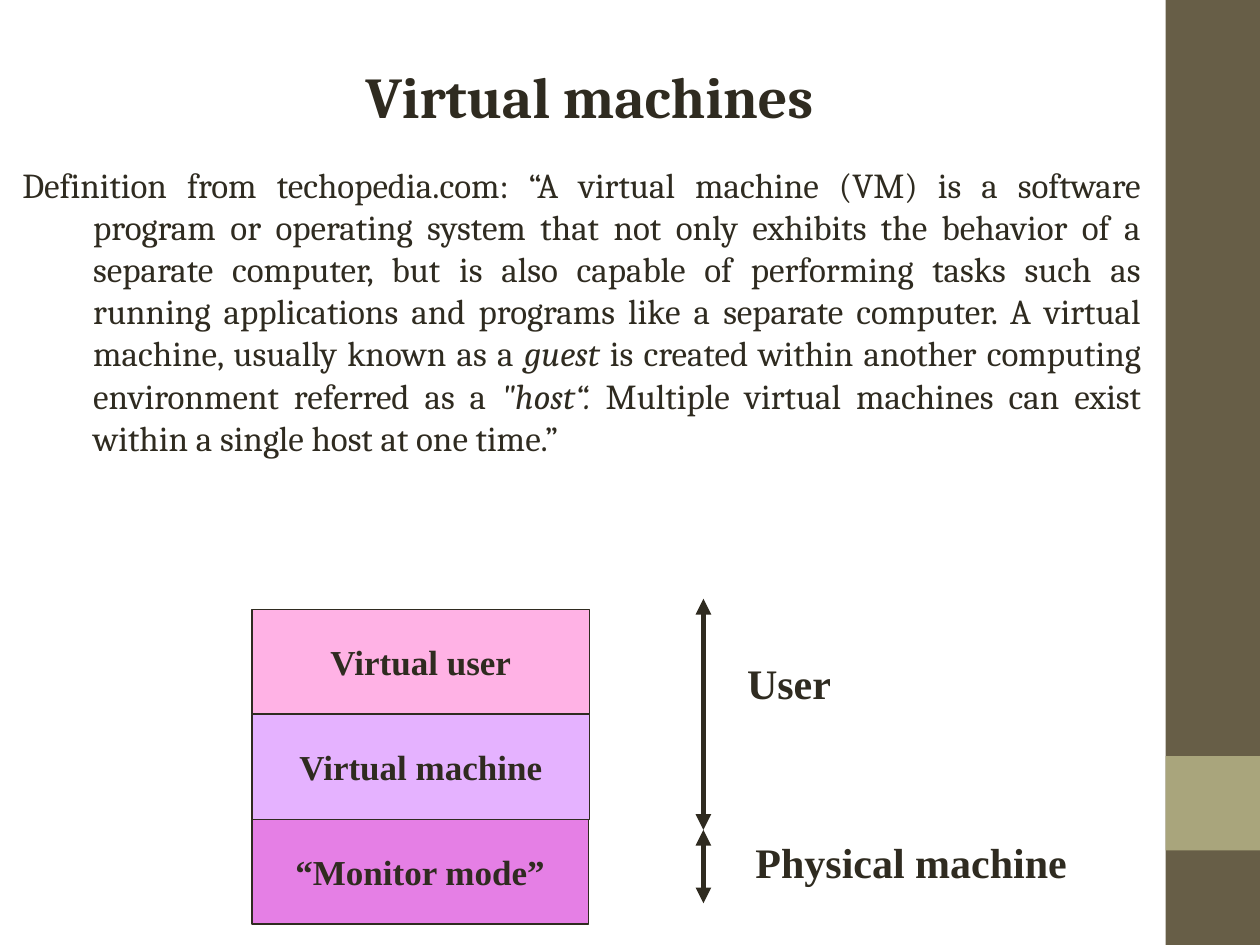
from lxml import etree
from pptx import Presentation
from pptx import util as u
from pptx.dml.color import RGBColor
from pptx.enum import shapes, text
from pptx.oxml.ns import qn

INK = RGBColor(0x2F, 0x2B, 0x20)
OLIVE = RGBColor(0x67, 0x5E, 0x47)
SAGE = RGBColor(0xA9, 0xA5, 0x7C)
PINK = RGBColor(0xFF, 0x66, 0xCC)
LILAC = RGBColor(0xCC, 0x66, 0xFF)
MAGENTA = RGBColor(0xCC, 0x00, 0xCC)

HEADING_FONT = "Cambria"
DIAGRAM_FONT = "Times New Roman"

DEFINITION = [
    ("Definition from techopedia.com: “A virtual machine (VM) is a software "
     "program or operating system that not only exhibits the behavior of a "
     "separate computer, but is also capable of performing tasks such as "
     "running applications and programs like a separate computer. A virtual "
     "machine, usually known as a ", False),
    ("guest ", True),
    ("is created within another computing environment referred as a ", False),
    ("\"host“.", True),
    (" Multiple virtual machines can exist within a single host at one time.”", False),
]
LAYERS = [("Virtual user", PINK, 6.81), ("Virtual machine", LILAC, 6.81),
          ("“Monitor mode”", MAGENTA, 6.78)]


def add_run(paragraph, words, size, font, bold=False, italic=False):
    run = paragraph.add_run()
    run.text = words
    run.font.size = u.Pt(size)
    run.font.name = font
    run.font.bold = bold
    run.font.italic = italic
    run.font.color.rgb = INK


def add_rectangle(slide, left, top, width, height, color):
    shape = slide.shapes.add_shape(
        shapes.MSO_SHAPE.RECTANGLE, u.Cm(left), u.Cm(top), u.Cm(width), u.Cm(height))
    shape.shadow.inherit = False
    shape.fill.solid()
    shape.fill.fore_color.rgb = color
    shape.line.fill.background()
    return shape


def add_text_box(slide, left, top, width, height):
    shape = slide.shapes.add_textbox(u.Cm(left), u.Cm(top), u.Cm(width), u.Cm(height))
    shape.text_frame.word_wrap = True
    return shape.text_frame.paragraphs[0]


def add_sidebar(slide, left, top, width, height):
    add_rectangle(slide, left, top, width, height, OLIVE)
    add_rectangle(slide, left, top + 0.8 * height, width, 0.1 * height, SAGE)


def add_title(slide, left, top, width, height):
    title = slide.shapes.title
    title.left, title.top = u.Cm(left), u.Cm(top)
    title.width, title.height = u.Cm(width), u.Cm(height)
    frame = title.text_frame
    frame.auto_size = text.MSO_AUTO_SIZE.NONE
    frame.vertical_anchor = text.MSO_ANCHOR.TOP
    paragraph = frame.paragraphs[0]
    paragraph.alignment = text.PP_ALIGN.CENTER
    add_run(paragraph, "Virtual machines", 33, HEADING_FONT, bold=True)


def add_definition(slide, left, top, width, height):
    paragraph = add_text_box(slide, left, top, width, height)
    paragraph.alignment = text.PP_ALIGN.JUSTIFY
    properties = paragraph._p.get_or_add_pPr()
    properties.set("marL", str(u.Cm(1.43)))
    properties.set("indent", str(-u.Cm(1.43)))
    for words, italic in DEFINITION:
        add_run(paragraph, words, 20, HEADING_FONT, italic=italic)


def add_layers(slide, left, top, height):
    layer_height = height / len(LAYERS)
    for index, (label, color, width) in enumerate(LAYERS):
        layer = add_rectangle(
            slide, left, top + index * layer_height, width, layer_height, color)
        solid_color = layer.fill._xPr.find(qn("a:solidFill"))[0]
        etree.SubElement(solid_color, qn("a:alpha"), val="50000")
        layer.line.color.rgb = INK
        layer.line.width = u.Pt(0.75)
        frame = layer.text_frame
        frame.word_wrap = False
        frame.vertical_anchor = text.MSO_ANCHOR.MIDDLE
        paragraph = frame.paragraphs[0]
        paragraph.alignment = text.PP_ALIGN.CENTER
        add_run(paragraph, label, 20, DIAGRAM_FONT, bold=True)


def add_double_arrow(slide, x, top, bottom):
    arrow = slide.shapes.add_connector(
        shapes.MSO_CONNECTOR.STRAIGHT, u.Cm(x), u.Cm(top), u.Cm(x), u.Cm(bottom))
    arrow.line.color.rgb = INK
    arrow.line.width = u.Pt(3)
    line = arrow.line._get_or_add_ln()
    for end in ("a:headEnd", "a:tailEnd"):
        etree.SubElement(line, qn(end), type="triangle")
    etree.SubElement(arrow._element.spPr, qn("a:effectLst"))


def add_extents(slide, left, top, height):
    boundary = top + 4.66
    add_double_arrow(slide, left, top, boundary)
    add_double_arrow(slide, left, boundary, top + height)
    for label, x, y, width in (("User", 0.63, 1.06, 2.24),
                               ("Physical machine", 0.8, 4.66, 6.9)):
        paragraph = add_text_box(slide, left + x, top + y, width, 1.27)
        add_run(paragraph, label, 24, DIAGRAM_FONT, bold=True)


def main():
    presentation = Presentation()
    presentation.slide_width, presentation.slide_height = u.Cm(25.4), u.Cm(19.05)
    slide = presentation.slides.add_slide(presentation.slide_layouts[5])
    add_sidebar(slide, 23.5, 0, 1.9, 19.05)
    add_definition(slide, 0.2, 3.18, 23.06, 6.35)
    add_layers(slide, 5.08, 12.28, 6.35)
    add_extents(slide, 14.18, 12.07, 6.14)
    add_title(slide, 0, 1.09, 23.77, 1.68)
    presentation.save("out.pptx")


if __name__ == "__main__":
    main()
